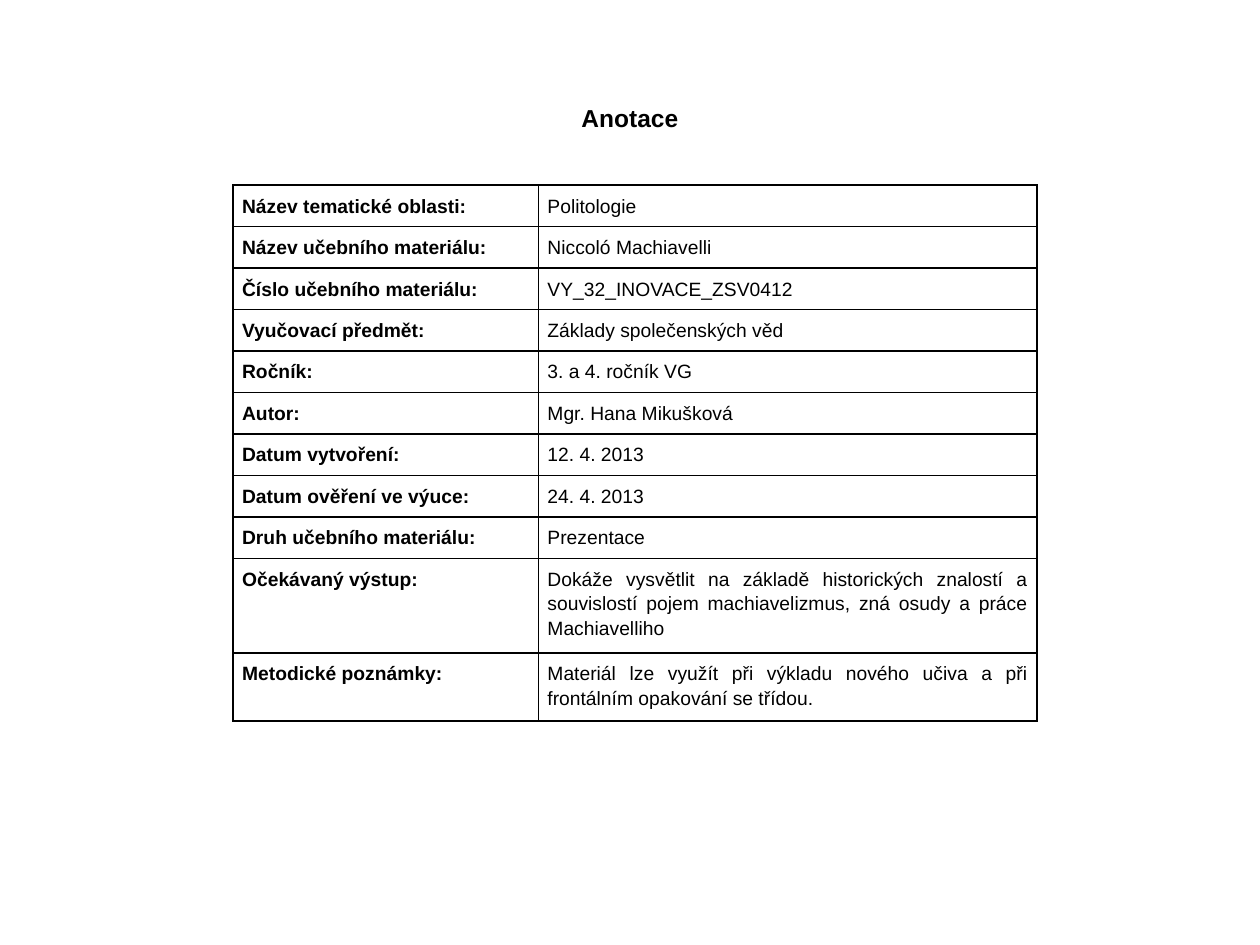
from lxml import etree
from pptx import Presentation
from pptx.dml.color import RGBColor
from pptx.enum.text import MSO_ANCHOR, PP_ALIGN
from pptx.oxml.ns import qn
from pptx.util import Cm, Pt

BLACK = RGBColor(0, 0, 0)
WHITE = RGBColor(255, 255, 255)
FONT = "Arial"
LEFT, CENTER, JUSTIFY = PP_ALIGN.LEFT, PP_ALIGN.CENTER, PP_ALIGN.JUSTIFY
MIDDLE = MSO_ANCHOR.MIDDLE
BLANK_LAYOUT = 6

ANNOTATION = [
    ("Název tematické oblasti:", "Politologie"),
    ("Název učebního materiálu:", "Niccoló Machiavelli"),
    ("Číslo učebního materiálu:", "VY_32_INOVACE_ZSV0412"),
    ("Vyučovací předmět:", "Základy společenských věd"),
    ("Ročník:", "3. a 4. ročník VG"),
    ("Autor:", "Mgr. Hana Mikušková"),
    ("Datum vytvoření:", "12. 4. 2013"),
    ("Datum ověření ve výuce:", "24. 4. 2013"),
    ("Druh učebního materiálu:", "Prezentace"),
    ("Očekávaný výstup:",
     "Dokáže vysvětlit na základě historických znalostí a souvislostí "
     "pojem machiavelizmus, zná osudy a práce Machiavelliho"),
    ("Metodické poznámky:",
     "Materiál lze využít při výkladu nového učiva a při frontálním "
     "opakování se třídou."),
]
ROW_HEIGHTS = [Cm(0.83)] * 9 + [Cm(1.9), Cm(1.37)]
FIRST_JUSTIFIED_LABEL = 8
LABEL_SHARE = 0.38


def write(frame, text, size, bold, align):
    """Put one formatted paragraph into a text frame."""
    frame.text = text
    frame.word_wrap = True
    paragraph = frame.paragraphs[0]
    paragraph.alignment = align
    font = paragraph.runs[0].font
    font.name, font.size, font.bold = FONT, Pt(size), bold
    font.color.rgb = BLACK
    return paragraph


def add_borders(cell, width):
    """Draw a solid line on all four sides of a cell."""
    properties = cell._tc.get_or_add_tcPr()
    for side in ("a:lnL", "a:lnR", "a:lnT", "a:lnB"):
        line = etree.SubElement(properties, qn(side), w=str(width))
        solid = etree.SubElement(line, qn("a:solidFill"))
        etree.SubElement(solid, qn("a:srgbClr"), val=str(BLACK))


def fill_cell(cell, text, bold, align):
    """Write and format one cell of the annotation table."""
    cell.margin_left = cell.margin_right = Cm(0.18)
    cell.margin_top = cell.margin_bottom = Cm(0.15)
    paragraph = write(cell.text_frame, text, 11, bold, align)
    paragraph.line_spacing = 1.15
    add_borders(cell, Pt(1))
    cell.fill.solid()
    cell.fill.fore_color.rgb = WHITE


def add_title(slide, left, top, width, height):
    """Place the centred heading in its box."""
    heading = slide.shapes.add_textbox(left, top, width, height)
    heading.text_frame.vertical_anchor = MIDDLE
    write(heading.text_frame, "Anotace", 14, True, CENTER)


def add_annotation(slide, left, top, width):
    """Place the table of labels and values."""
    table = slide.shapes.add_table(
        len(ANNOTATION), 2, left, top, width, sum(ROW_HEIGHTS)).table
    table.first_row = table.horz_banding = False
    label_width = int(width * LABEL_SHARE)
    table.columns[0].width = label_width
    table.columns[1].width = width - label_width
    for index, (label, value) in enumerate(ANNOTATION):
        table.rows[index].height = ROW_HEIGHTS[index]
        label_align = JUSTIFY if index >= FIRST_JUSTIFIED_LABEL else LEFT
        fill_cell(table.cell(index, 0), label, True, label_align)
        fill_cell(table.cell(index, 1), value, False, JUSTIFY)


def main():
    """Build the annotation slide and save it."""
    deck = Presentation()
    deck.slide_width, deck.slide_height = Cm(25.4), Cm(19.05)
    slide = deck.slides.add_slide(deck.slide_layouts[BLANK_LAYOUT])
    add_title(slide, 0, Cm(1.73), deck.slide_width, Cm(1.27))
    add_annotation(slide, Cm(4.7), Cm(3.73), Cm(16.2))
    deck.save("out.pptx")


if __name__ == "__main__":
    main()
